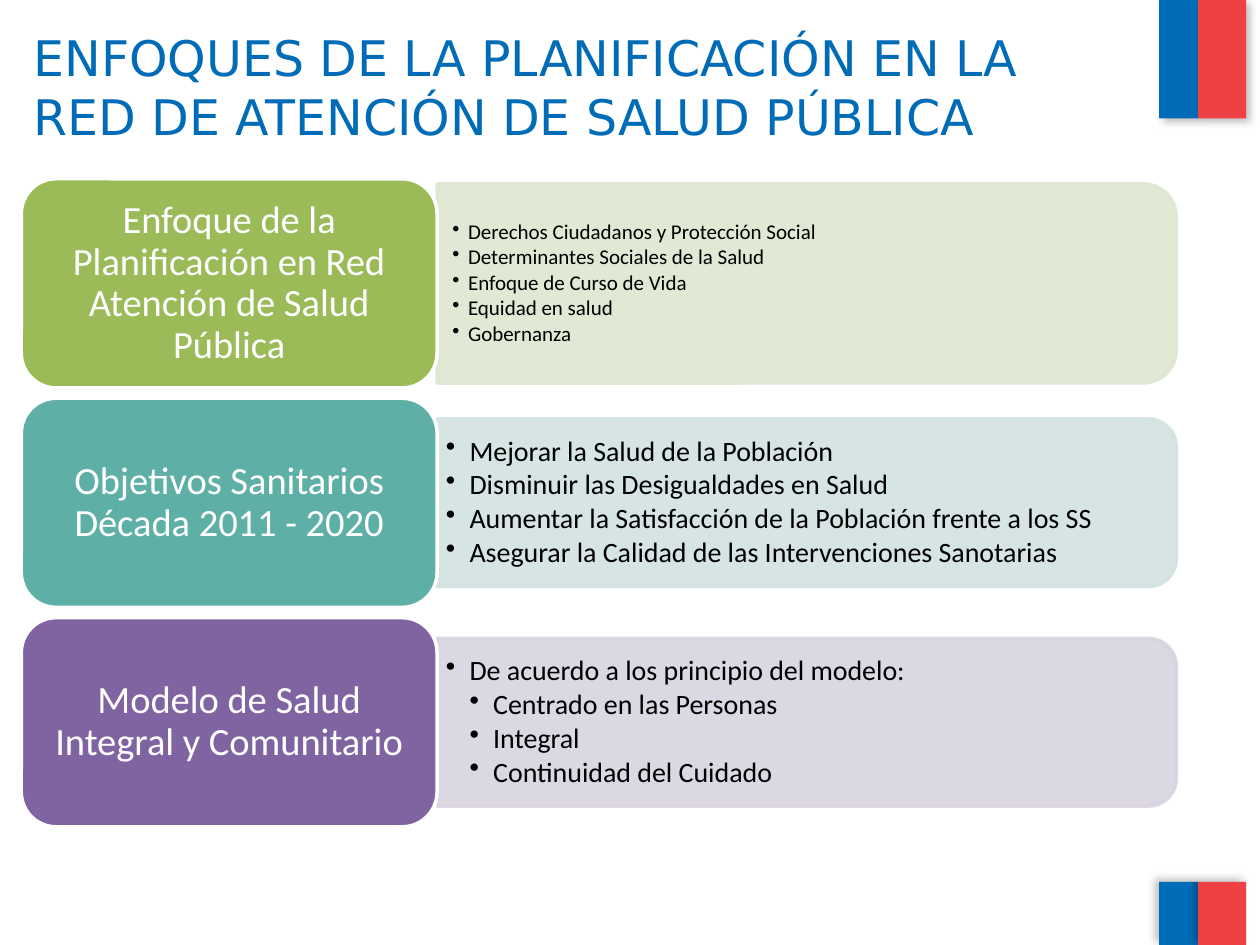
from lxml import etree
from pptx import Presentation
from pptx.dml.color import RGBColor
from pptx.enum.shapes import MSO_SHAPE
from pptx.enum.text import MSO_ANCHOR, PP_ALIGN
from pptx.oxml.ns import qn
from pptx.util import Pt

APPROACHES = [
    ("Enfoque de la Planificación en Red Atención de Salud Pública", "9BBB59", "DEE7D1",
     113.8, 12, 8.64,
     [("Derechos Ciudadanos y Protección Social", 1),
      ("Determinantes Sociales de la Salud", 1),
      ("Enfoque de Curso de Vida", 1),
      ("Equidad en salud", 1),
      ("Gobernanza", 1)]),
    ("Objetivos Sanitarios Década 2011 - 2020", "5EAFA6", "D2E3E2",
     95.8, 16, 5.04,
     [("Mejorar la Salud de la Población", 1),
      ("Disminuir las Desigualdades en Salud", 1),
      ("Aumentar la Satisfacción de la Población frente a los SS", 1),
      ("Asegurar la Calidad de las Intervenciones Sanotarias", 1)]),
    ("Modelo de Salud Integral y Comunitario", "8064A2", "D8D3E0",
     95.8, 16, 5.04,
     [("De acuerdo a los principio del modelo:", 1),
      ("Centrado en las Personas", 2),
      ("Integral", 2),
      ("Continuidad del Cuidado", 2)]),
]


def color(value):
    """Turn a hex string into a colour."""
    return RGBColor.from_string(value)


def add_block(slide, kind, left, top, width, height, fill, line=None):
    """Add a flat filled shape, outlined if a line colour is given."""
    block = slide.shapes.add_shape(kind, Pt(left), Pt(top), Pt(width), Pt(height))
    block.shadow.inherit = False
    block.fill.solid()
    block.fill.fore_color.rgb = color(fill)
    if line:
        block.line.color.rgb = color(line)
        block.line.width = Pt(2)
    else:
        block.line.fill.background()
    return block


def set_alpha(fill_parent, percent):
    """Make the solid fill below an element partly transparent."""
    rgb = fill_parent.find(qn("a:solidFill")).find(qn("a:srgbClr"))
    etree.SubElement(rgb, qn("a:alpha"), val=str(percent * 1000))


def add_shadow(block, direction):
    """Cast a soft black shadow in the given direction."""
    effects = block._element.spPr.find(qn("a:effectLst"))
    shadow = etree.SubElement(effects, qn("a:outerShdw"), blurRad=str(Pt(5)), dist=str(Pt(3)),
                              dir=str(direction * 60000), algn="ctr", rotWithShape="0")
    black = etree.SubElement(shadow, qn("a:srgbClr"), val="000000")
    etree.SubElement(black, qn("a:alpha"), val="25000")


def set_frame(frame, anchor, horizontal, vertical):
    """Set wrapping, anchor and insets of a text frame."""
    frame.word_wrap = True
    frame.vertical_anchor = anchor
    frame.margin_left = frame.margin_right = Pt(horizontal)
    frame.margin_top = frame.margin_bottom = Pt(vertical)


def add_run(paragraph, text, size, font, ink):
    """Append one formatted run."""
    run = paragraph.add_run()
    run.text = text
    run.font.size = Pt(size)
    run.font.name = font
    run.font.color.rgb = color(ink)


def add_bullet(paragraph, indent, level):
    """Give a paragraph a hanging bullet at its level."""
    props = paragraph._p.get_or_add_pPr()
    props.set("marL", str(Pt(indent * level)))
    props.set("indent", str(-Pt(indent)))
    etree.SubElement(props, qn("a:buChar"), char="•")


def add_flag(slide, left, top, height, direction):
    """Draw a blue and red band with its shadow."""
    for offset, width, fill in ((0, 22.3, "006CB7"), (22.3, 27.4, "EF4144")):
        stripe = add_block(slide, MSO_SHAPE.RECTANGLE, left + offset, top, width, height, fill)
        add_shadow(stripe, direction)


def add_title(slide, left, top, width, height):
    """Write the slide heading."""
    heading = slide.shapes.add_textbox(Pt(left), Pt(top), Pt(width), Pt(height))
    set_frame(heading.text_frame, MSO_ANCHOR.TOP, 7.2, 3.6)
    heading.text_frame.margin_right = Pt(14)
    add_run(heading.text_frame.paragraphs[0],
            "ENFOQUES DE LA PLANIFICACIÓN EN LA RED DE ATENCIÓN DE SALUD PÚBLICA",
            28, "DejaVu Sans", "006CB7")


def add_panel(slide, left, top, width, height, tint, size, inset, points):
    """Draw a tinted panel rounded on the right, with its bullet points."""
    panel = add_block(slide, MSO_SHAPE.ROUND_2_SAME_RECTANGLE,
                      left + (width - height) / 2, top + (height - width) / 2,
                      height, width, tint, tint)
    panel.rotation = 90
    set_alpha(panel._element.spPr, 90)
    set_alpha(panel.line._get_or_add_ln(), 90)

    listing = slide.shapes.add_textbox(Pt(left), Pt(top), Pt(width - 5), Pt(height))
    frame = listing.text_frame
    set_frame(frame, MSO_ANCHOR.MIDDLE, inset, inset / 2)
    indent = 9 if size == 12 else 13.5
    for index, (text, level) in enumerate(points):
        paragraph = frame.add_paragraph() if index else frame.paragraphs[0]
        paragraph.line_spacing = 0.9
        paragraph.space_after = Pt(round(size * 0.13, 1))
        add_bullet(paragraph, indent, level)
        add_run(paragraph, text, size, "Calibri", "000000")


def add_approach(slide, left, top, width, height, approach):
    """Place one row: the panel of points and the label card over its edge."""
    label, fill, tint, panel_height, size, inset, points = approach
    card_width = 237.6
    add_panel(slide, left + card_width, top + (height - panel_height) / 2,
              width - card_width, panel_height, tint, size, inset, points)
    card = add_block(slide, MSO_SHAPE.ROUNDED_RECTANGLE, left, top, card_width, height,
                     fill, "FFFFFF")
    set_frame(card.text_frame, MSO_ANCHOR.MIDDLE, 12.2, 9.4)
    paragraph = card.text_frame.paragraphs[0]
    paragraph.alignment = PP_ALIGN.CENTER
    paragraph.line_spacing = 0.9
    add_run(paragraph, label, 22, "Calibri", "FFFFFF")


def main():
    """Build and save the slide."""
    deck = Presentation()
    deck.slide_width, deck.slide_height = Pt(720), Pt(540)
    slide = deck.slides.add_slide(deck.slide_layouts[6])
    add_flag(slide, 662.4, 0, 67.7, 45)
    add_flag(slide, 662.4, 504, 36, 215)
    add_title(slide, 12.2, 12.2, 643, 90)
    for row, approach in enumerate(APPROACHES):
        add_approach(slide, 12.2, 102.2 + row * 125.4, 660, 119.5, approach)
    deck.save("out.pptx")


if __name__ == "__main__":
    main()
